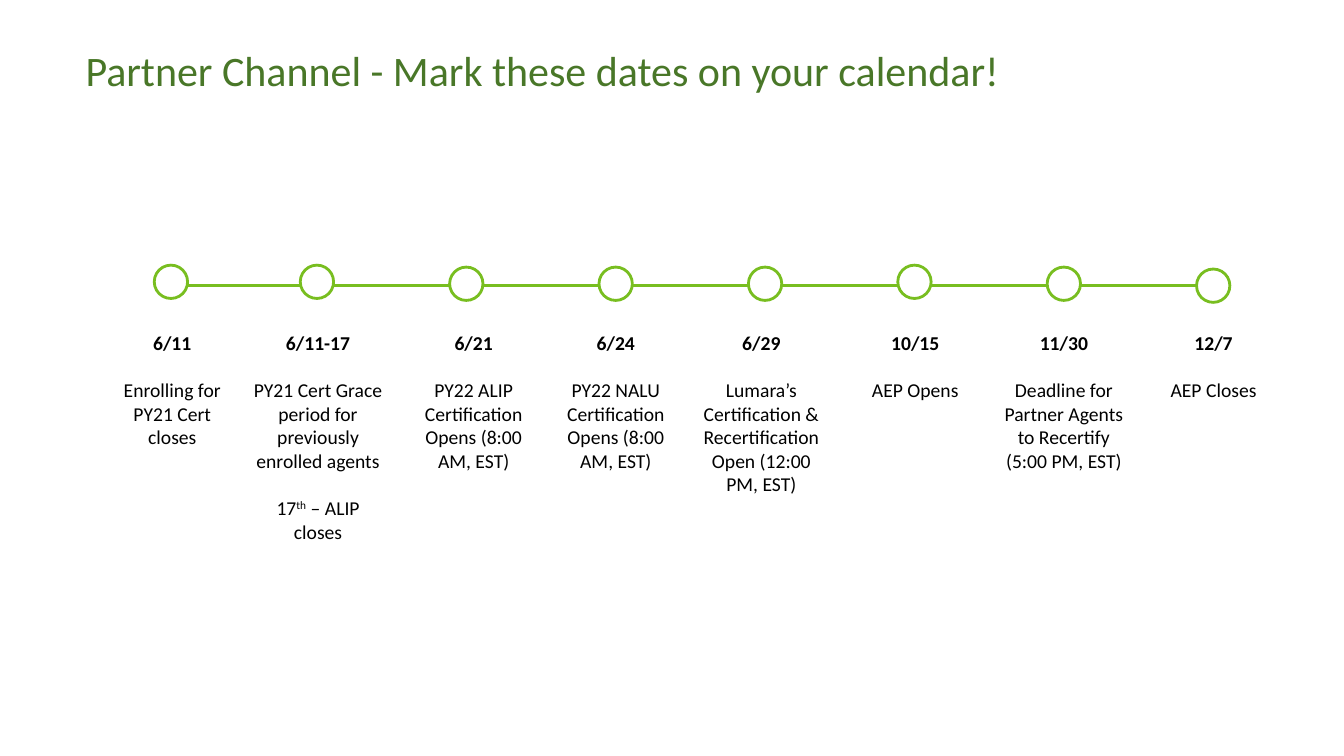
from pptx import Presentation
from pptx.dml.color import RGBColor
from pptx.enum.shapes import MSO_CONNECTOR, MSO_SHAPE
from pptx.enum.text import PP_ALIGN
from pptx.oxml.ns import qn
from pptx.util import Pt
from lxml import etree

STRAIGHT = MSO_CONNECTOR.STRAIGHT
OVAL = MSO_SHAPE.OVAL
LEFT = PP_ALIGN.LEFT
CENTER = PP_ALIGN.CENTER

MILESTONES = [
    ("6/11", ["Enrolling for PY21 Cert closes"], 110.2, 189.4, (72.7, 100.8, 137.5)),
    ("6/11-17", ["PY21 Cert Grace period for previously enrolled agents",
                 "17^th^ – ALIP closes"], None, 189.4, (171.4, 111.6, 175)),
    ("6/21", ["PY22 ALIP Certification Opens (8:00 AM, EST)"], None, 190.8, (288, 100.8, 137.5)),
    ("6/24", ["PY22 NALU Certification Opens (8:00 AM, EST)"], None, 190.8, (389.5, 100.8, 137.5)),
    ("6/29", ["Lumara’s\nCertification & Recertification Open (12:00 PM, EST)"],
     None, 190.8, (487.4, 113, 137.5)),
    ("10/15", ["AEP Opens"], None, 189.4, (603.4, 100.8, 162.7)),
    ("11/30", ["Deadline for Partner Agents to Recertify (5:00 PM, EST)"],
     None, 190.8, (705.6, 108.7, 162.7)),
    ("12/7", ["AEP Closes"], None, 192.2, (816.5, 100.8, 162.7)),
]
SECOND_CIRCLE_LEFT = 214.5
CIRCLE_PITCH = 106.7
CIRCLE_SIZE = 23.8
TEXT_TOP = 226.8
LINE_Y = 203.8


def color(value):
    return RGBColor.from_string(value)


class TimelineSlide:
    font = "Calibri"
    green = "78BE20"
    title_green = "497728"
    white = "FFFFFF"
    black = "000000"
    body_size = 14
    line_height = 17.1

    def __init__(self, presentation):
        self.slide = presentation.slides.add_slide(presentation.slide_layouts[6])

    def text_box(self, left, top, width, height, inset):
        shape = self.slide.shapes.add_textbox(Pt(left), Pt(top), Pt(width), Pt(height))
        text_frame = shape.text_frame
        text_frame.word_wrap = True
        text_frame.margin_left = text_frame.margin_right = Pt(inset)
        text_frame.margin_top = text_frame.margin_bottom = Pt(inset)
        return text_frame

    def style(self, paragraph, size, text_color, bold=False, alignment=LEFT):
        paragraph.alignment = alignment
        for run in paragraph.runs:
            run.font.name = self.font
            run.font.size = Pt(size)
            run.font.bold = bold
            run.font.color.rgb = color(text_color)

    def title(self, text):
        text_frame = self.text_box(54, 28.8, 877, 47.5, 7.2)
        text_frame.text = text
        paragraph = text_frame.paragraphs[0]
        paragraph.line_spacing = 0.9
        self.style(paragraph, 30, self.title_green)

    def line(self, start, end):
        connector = self.slide.shapes.add_connector(
            STRAIGHT, Pt(start), Pt(LINE_Y), Pt(end), Pt(LINE_Y))
        connector.line.color.rgb = color(self.green)
        connector.line.width = Pt(2)
        etree.SubElement(connector._element.spPr, qn("a:effectLst"))

    def circle(self, left, top):
        shape = self.slide.shapes.add_shape(
            OVAL, Pt(left), Pt(top), Pt(CIRCLE_SIZE), Pt(CIRCLE_SIZE))
        shape.shadow.inherit = False
        shape.fill.solid()
        shape.fill.fore_color.rgb = color(self.white)
        shape.line.color.rgb = color(self.green)
        shape.line.width = Pt(2)

    def description(self, date, blocks, left, width, height):
        text_frame = self.text_box(left, TEXT_TOP, width, height, 9.4)
        text_frame.text = date
        self.style(text_frame.paragraphs[0], self.body_size, self.black, True, CENTER)
        for block in blocks:
            for index, text in enumerate(block.split("\n")):
                paragraph = text_frame.add_paragraph()
                if index == 0:
                    paragraph.space_before = Pt(self.line_height)
                for position, part in enumerate(text.split("^")):
                    run = paragraph.add_run()
                    run.text = part
                    if position % 2:
                        run.font._element.set("baseline", "30000")
                self.style(paragraph, self.body_size, self.black, False, CENTER)


def main():
    presentation = Presentation()
    presentation.slide_width = Pt(960)
    presentation.slide_height = Pt(540)
    timeline = TimelineSlide(presentation)
    timeline.title("Partner Channel - Mark these dates on your calendar!")
    for start, end in [(134, 561), (486, 854.7)]:
        timeline.line(start, end)
    for index, (date, blocks, circle_left, circle_top, box) in enumerate(MILESTONES):
        if circle_left is None:
            circle_left = SECOND_CIRCLE_LEFT + (index - 1) * CIRCLE_PITCH
        timeline.circle(circle_left, circle_top)
        left, width, height = box
        timeline.description(date, blocks, left, width, height)
    presentation.save("out.pptx")


if __name__ == "__main__":
    main()
